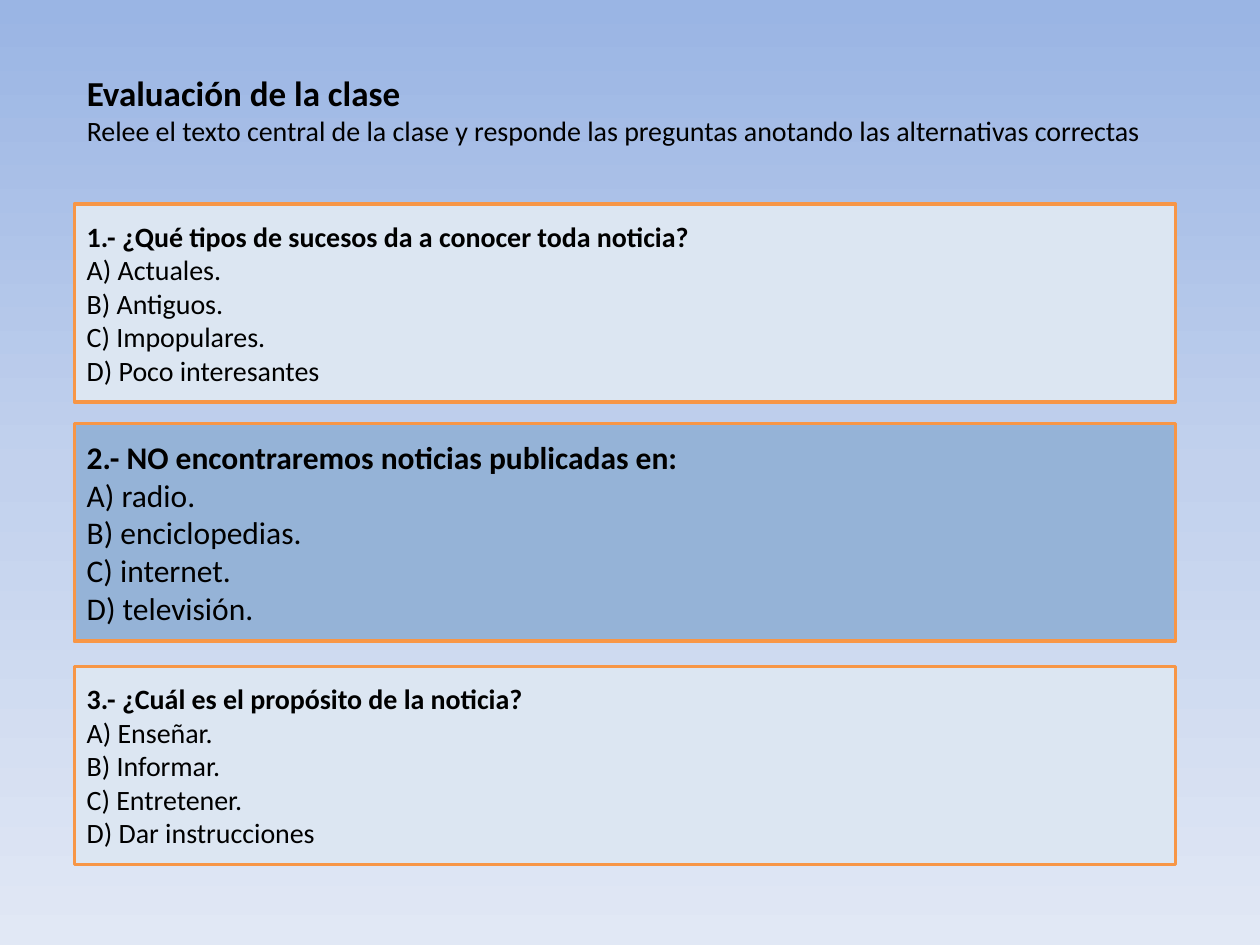
from copy import deepcopy
from dataclasses import dataclass

from pptx import Presentation, util as u
from pptx.dml.color import RGBColor
from pptx.enum import shapes, text
from pptx.oxml import ns


@dataclass(frozen=True)
class Theme:
    font: str = "Calibri"
    ink: str = "000000"
    border: str = "F79646"
    light: str = "DCE6F2"
    strong: str = "95B3D7"
    sky: tuple = ((0, "9AB5E4"), (0.5, "C2D1ED"), (1, "E1E8F5"))
    title: int = 20
    body: int = 16
    large: int = 18
    border_width: int = 2


class QuizSlide:
    """Holds the theme and the slide; places are shares of the slide's size."""

    def __init__(self, presentation, theme):
        self.theme = theme
        self.width = presentation.slide_width
        self.height = presentation.slide_height
        self.slide = presentation.slides.add_slide(presentation.slide_layouts[6])

    def box(self, left, top, width, height):
        return (int(left * self.width), int(top * self.height),
                int(width * self.width), int(height * self.height))

    def background(self):
        fill = self.slide.background.fill
        fill.gradient()
        fill.gradient_angle = 270
        stop_list = next(self.slide.element.iter(ns.qn("a:gsLst")))
        stop_list.insert(1, deepcopy(stop_list[0]))
        for stop, (position, color) in zip(fill.gradient_stops, self.theme.sky):
            stop.position = position
            stop.color.rgb = RGBColor.from_string(color)

    def set_lines(self, shape, lines, sizes, alignment):
        """Fill the shape with one paragraph per line, the first one bold."""
        frame = shape.text_frame
        frame.word_wrap = True
        frame.text = "\n".join(lines)
        for index, (paragraph, size) in enumerate(zip(frame.paragraphs, sizes)):
            paragraph.alignment = alignment
            for run in paragraph.runs:
                run.font.name = self.theme.font
                run.font.size = u.Pt(size)
                run.font.bold = index == 0
                run.font.color.rgb = RGBColor.from_string(self.theme.ink)

    def heading(self, place, title, instruction):
        shape = self.slide.shapes.add_textbox(*self.box(*place))
        self.set_lines(shape, [title, instruction],
                       [self.theme.title, self.theme.body], text.PP_ALIGN.LEFT)

    def question(self, place, question, answers, fill, size):
        shape = self.slide.shapes.add_shape(
            shapes.MSO_SHAPE.RECTANGLE, *self.box(*place))
        shape.shadow.inherit = False
        shape.fill.solid()
        shape.fill.fore_color.rgb = RGBColor.from_string(fill)
        shape.line.color.rgb = RGBColor.from_string(self.theme.border)
        shape.line.width = u.Pt(self.theme.border_width)
        shape.text_frame.vertical_anchor = text.MSO_ANCHOR.MIDDLE
        lines = [question] + [f"{letter}) {answer}"
                              for letter, answer in zip("ABCD", answers)]
        self.set_lines(shape, lines, [size] * len(lines), text.PP_ALIGN.JUSTIFY)


def main():
    presentation = Presentation()
    presentation.slide_width = u.Inches(10)
    presentation.slide_height = u.Inches(7.5)
    theme = Theme()
    quiz = QuizSlide(presentation, theme)
    quiz.background()

    left, width = 0.59 / 10, 8.74 / 10
    quiz.heading(
        (left, 0.52 / 7.5, 8.82 / 10, 1.01 / 7.5),
        "Evaluación de la clase",
        "Relee el texto central de la clase y responde las preguntas "
        "anotando las alternativas correctas")

    questions = [
        (1.62, 1.57, theme.light, theme.body,
         "1.- ¿Qué tipos de sucesos da a conocer toda noticia?",
         ["Actuales.", "Antiguos.", "Impopulares.", "Poco interesantes"]),
        (3.36, 1.73, theme.strong, theme.large,
         "2.- NO encontraremos noticias publicadas en:",
         ["radio.", "enciclopedias.", "internet.", "televisión."]),
        (5.29, 1.57, theme.light, theme.body,
         "3.- ¿Cuál es el propósito de la noticia?",
         ["Enseñar.", "Informar.", "Entretener.", "Dar instrucciones"]),
    ]
    for top, height, fill, size, question, answers in questions:
        quiz.question((left, top / 7.5, width, height / 7.5),
                      question, answers, fill, size)

    presentation.save("out.pptx")


if __name__ == "__main__":
    main()
